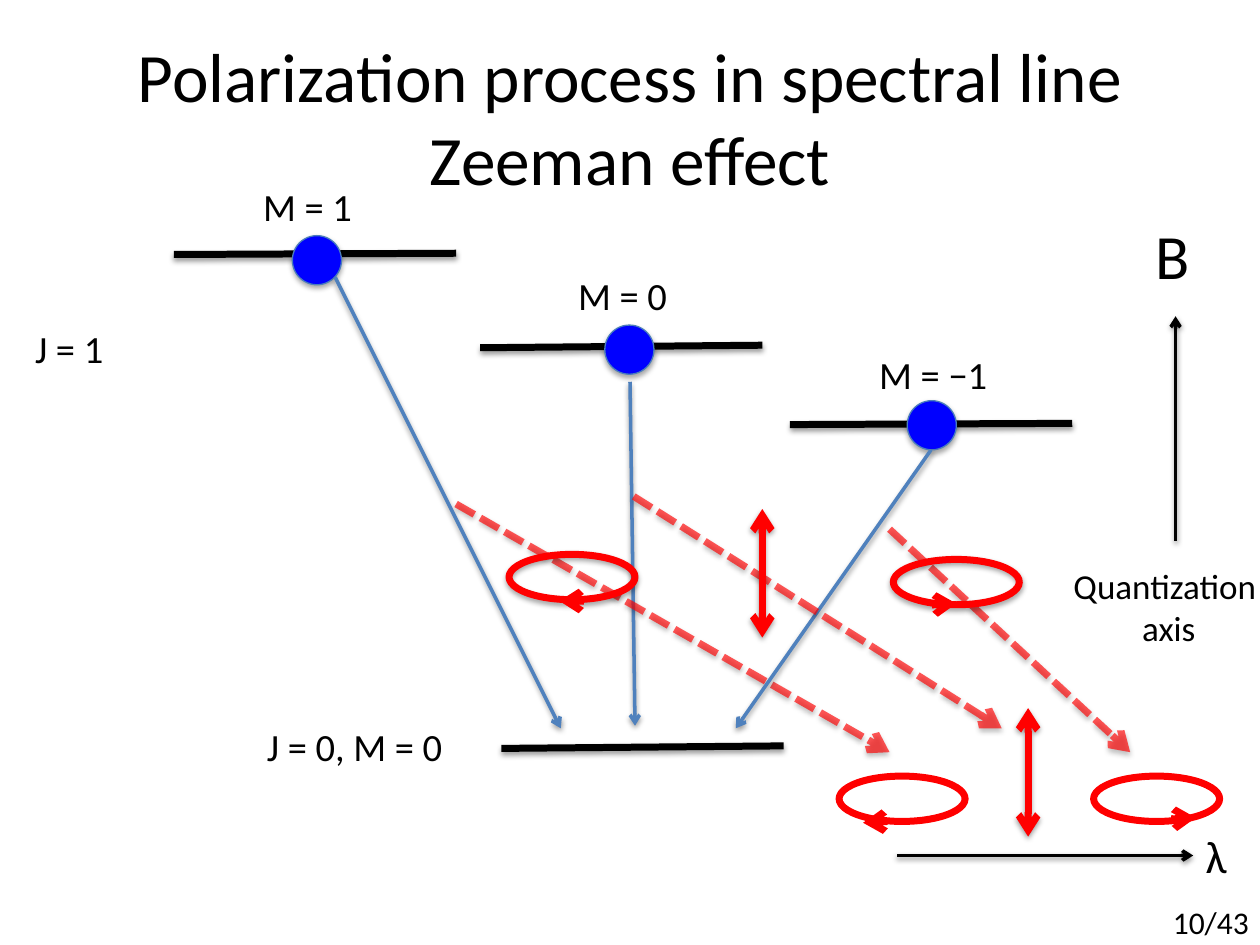
from dataclasses import dataclass
from typing import Optional

from lxml.etree import SubElement
from pptx import Presentation
from pptx.dml.color import RGBColor
from pptx.enum.dml import MSO_LINE
from pptx.enum.shapes import MSO_CONNECTOR, MSO_SHAPE
from pptx.enum.text import MSO_ANCHOR, MSO_AUTO_SIZE, PP_ALIGN
from pptx.oxml.ns import qn
from pptx.util import Inches, Pt


@dataclass(frozen=True)
class Theme:
    font: str = "Calibri"
    black: str = "000000"
    transition: str = "4F81BD"
    electron: str = "0000FF"
    electron_edge: str = "4B7EBC"
    light: str = "FF0000"
    title: float = 39.6
    field: float = 36
    wavelength: float = 26
    level: float = 22
    axis: float = 20
    page: float = 18
    thin: float = 2
    thick: float = 4
    line_shadow: tuple = (38, 1.6)
    shape_shadow: tuple = (35, 1.8)


@dataclass(frozen=True)
class Line:
    start: tuple
    end: tuple
    color: str
    width: float
    head: bool = False
    tail: bool = True
    dashed: bool = False
    shadow: bool = True


@dataclass(frozen=True)
class Oval:
    left: float
    top: float
    width: float
    height: float
    edge: str
    edge_width: float
    fill: Optional[str] = None
    shadow: bool = True


@dataclass(frozen=True)
class Label:
    left: float
    top: float
    width: float
    height: float
    lines: tuple
    size: float
    alignment: PP_ALIGN = PP_ALIGN.LEFT


THEME = Theme()


def energy_level(start: tuple, end: tuple) -> Line:
    return Line(start, end, THEME.black, THEME.thick, tail=False)


def transition(start: tuple, end: tuple) -> Line:
    return Line(start, end, THEME.transition, THEME.thin)


def axis(start: tuple, end: tuple) -> Line:
    return Line(start, end, THEME.black, THEME.thin)


def emission(start: tuple, end: tuple) -> Line:
    return Line(start, end, THEME.light, THEME.thick, dashed=True)


def rotation(start: tuple, end: tuple) -> Line:
    return Line(start, end, THEME.light, THEME.thick, shadow=False)


def linear_polarization(x: float, bottom: float) -> Line:
    return Line((x, bottom), (x, bottom - 1.02), THEME.light, THEME.thick, head=True)


def electron(left: float, top: float) -> Oval:
    return Oval(left, top, 0.39, 0.39, THEME.electron_edge, 0.75, THEME.electron)


def circular_polarization(left: float, top: float, shadow: bool) -> Oval:
    return Oval(left, top, 1, 0.36, THEME.light, THEME.thick, shadow=shadow)


def level_label(left: float, top: float, width: float, text: str) -> Label:
    return Label(left, top, width, 0.47, (text,), THEME.level)


ELEMENTS = (
    transition((5, 3.03), (5.04, 5.76)),
    energy_level((3.98, 5.94), (6.22, 5.92)),
    energy_level((1.38, 2.02), (3.62, 2.01)),
    energy_level((3.81, 2.76), (6.05, 2.74)),
    energy_level((6.27, 3.37), (8.51, 3.36)),
    level_label(2.02, 5.69, 1.83, "J = 0, M = 0"),
    level_label(0.18, 2.53, 0.75, "J = 1"),
    level_label(1.99, 1.4, 0.92, "M = 1"),
    level_label(4.49, 2.11, 0.98, "M = 0"),
    level_label(6.88, 2.74, 1.07, "M = −1"),
    axis((9.33, 4.29), (9.33, 2.51)),
    electron(2.32, 1.87),
    electron(4.8, 2.58),
    emission((3.62, 4), (7.06, 5.97)),
    circular_polarization(4.04, 4.4, True),
    rotation((4.62, 4.77), (4.44, 4.77)),
    emission((7.06, 4.2), (8.97, 5.97)),
    circular_polarization(7.09, 4.44, True),
    rotation((7.4, 4.8), (7.59, 4.79)),
    electron(7.2, 3.18),
    transition((2.66, 2.2), (4.45, 5.78)),
    transition((7.39, 3.57), (5.84, 5.78)),
    emission((5.03, 3.94), (7.95, 5.78)),
    linear_polarization(6.05, 5.06),
    circular_polarization(8.68, 6.16, False),
    rotation((9.3, 6.5), (9.49, 6.49)),
    rotation((7.03, 6.52), (6.85, 6.53)),
    axis((7.12, 6.79), (9.47, 6.79)),
    Label(9.47, 6.52, 0.38, 0.54, ("λ",), THEME.wavelength),
    Label(9.07, 1.67, 0.48, 0.71, ("B",), THEME.field),
    circular_polarization(6.66, 6.16, False),
    linear_polarization(8.16, 6.64),
    Label(8.41, 4.43, 1.67, 0.77, ("Quantization", " axis"), THEME.axis, PP_ALIGN.CENTER),
    Label(9.21, 7.12, 0.81, 0.4, ("10/43",), THEME.page),
)


def add_run(paragraph, text: str, size: float) -> None:
    run = paragraph.add_run()
    run.text = text
    run.font.name = THEME.font
    run.font.size = Pt(size)
    run.font.color.rgb = RGBColor.from_string(THEME.black)


def set_effects(shape, visible: bool, shadow: tuple) -> None:
    effects = SubElement(shape._element.spPr, qn("a:effectLst"))
    if visible:
        opacity, distance = shadow
        outer = SubElement(effects, qn("a:outerShdw"), blurRad=str(Pt(3.1)),
                           dist=str(Pt(distance)), dir="5400000", rotWithShape="0")
        color = SubElement(outer, qn("a:srgbClr"), val=THEME.black)
        SubElement(color, qn("a:alpha"), val=str(opacity * 1000))


def draw_line(slide, line: Line) -> None:
    points = [Inches(value) for value in line.start + line.end]
    connector = slide.shapes.add_connector(MSO_CONNECTOR.STRAIGHT, *points)
    connector.line.width = Pt(line.width)
    connector.line.color.rgb = RGBColor.from_string(line.color)
    outline = connector.line._get_or_add_ln()
    if line.dashed:
        connector.line.dash_style = MSO_LINE.SQUARE_DOT
        color = outline.find(".//" + qn("a:srgbClr"))
        SubElement(color, qn("a:alpha"), val="65000")
    for tag, present in (("a:headEnd", line.head), ("a:tailEnd", line.tail)):
        if present:
            SubElement(outline, qn(tag), type="arrow")
    set_effects(connector, line.shadow, THEME.line_shadow)


def draw_oval(slide, oval: Oval) -> None:
    shape = slide.shapes.add_shape(MSO_SHAPE.OVAL, Inches(oval.left), Inches(oval.top),
                                   Inches(oval.width), Inches(oval.height))
    if oval.fill:
        shape.fill.solid()
        shape.fill.fore_color.rgb = RGBColor.from_string(oval.fill)
    else:
        shape.fill.background()
    shape.line.color.rgb = RGBColor.from_string(oval.edge)
    shape.line.width = Pt(oval.edge_width)
    set_effects(shape, oval.shadow, THEME.shape_shadow)


def draw_label(slide, label: Label) -> None:
    box = slide.shapes.add_textbox(Inches(label.left), Inches(label.top),
                                   Inches(label.width), Inches(label.height))
    frame = box.text_frame
    frame.word_wrap = False
    frame.auto_size = MSO_AUTO_SIZE.SHAPE_TO_FIT_TEXT
    for index, text in enumerate(label.lines):
        paragraph = frame.add_paragraph() if index else frame.paragraphs[0]
        paragraph.alignment = label.alignment
        add_run(paragraph, text, label.size)


def draw_title(slide) -> None:
    title = slide.shapes.title
    title.left, title.top = Inches(0.5), Inches(0.3)
    title.width, title.height = Inches(9), Inches(1.25)
    title.text_frame.vertical_anchor = MSO_ANCHOR.MIDDLE
    title.text_frame.auto_size = MSO_AUTO_SIZE.NONE
    paragraph = title.text_frame.paragraphs[0]
    paragraph.alignment = PP_ALIGN.CENTER
    add_run(paragraph, "Polarization process in spectral line", THEME.title)
    paragraph.add_line_break()
    add_run(paragraph, "Zeeman effect", THEME.title)


def main() -> None:
    presentation = Presentation()
    presentation.slide_width, presentation.slide_height = Inches(10), Inches(7.5)
    slide = presentation.slides.add_slide(presentation.slide_layouts[5])
    draw_title(slide)
    draw = {Line: draw_line, Oval: draw_oval, Label: draw_label}
    for element in ELEMENTS:
        draw[type(element)](slide, element)
    presentation.save("out.pptx")


if __name__ == "__main__":
    main()
